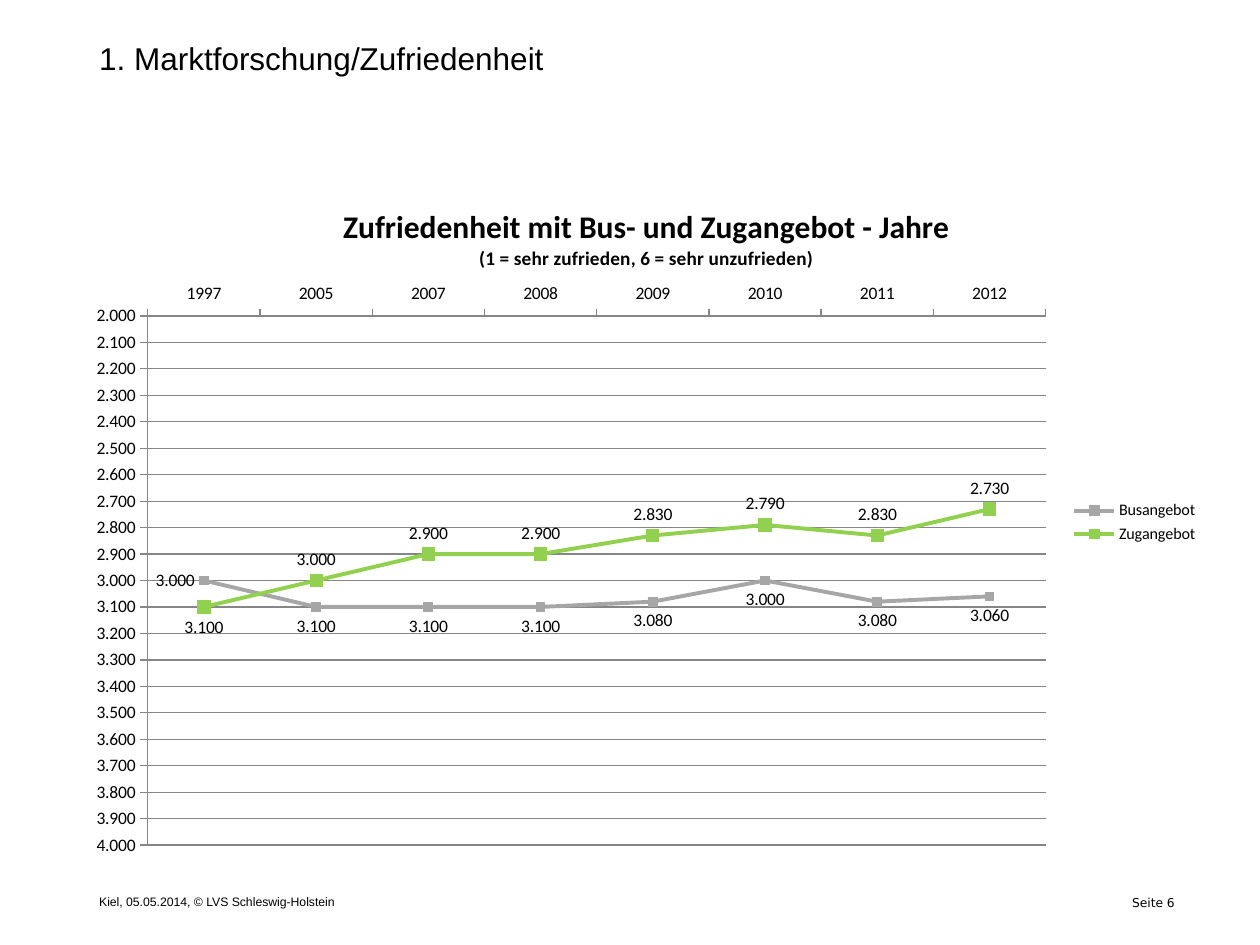
from lxml import etree
from pptx import Presentation
from pptx.chart.data import CategoryChartData
from pptx.dml.color import RGBColor
from pptx.enum.chart import (XL_CHART_TYPE, XL_LABEL_POSITION, XL_LEGEND_POSITION,
                             XL_MARKER_STYLE, XL_TICK_MARK)
from pptx.enum.text import MSO_ANCHOR, PP_ALIGN
from pptx.oxml.ns import qn
from pptx.util import Cm, Pt

COLORS = {"text": "000000", "grid": "868686", "bus": "A6A6A6", "train": "92D050"}
RGB = {name: RGBColor.from_string(value) for name, value in COLORS.items()}
NUMBER_FORMAT = "0.000"
CHART_W, CHART_H = 22.91, 14.0


def set_font(font, size, name="Calibri", bold=False):
    for key, value in {"size": Pt(size), "name": name, "bold": bold}.items():
        setattr(font, key, value)
    font.color.rgb = RGB["text"]


def set_layout(parent, position, x, y, w=None, h=None):
    """Place a chart part by lengths in cm from the chart's corner."""
    for old in parent.findall(qn("c:layout")):
        parent.remove(old)
    layout = etree.Element(qn("c:layout"))
    manual = etree.SubElement(layout, qn("c:manualLayout"))
    values = {"xMode": "edge", "yMode": "edge", "x": x / CHART_W, "y": y / CHART_H}
    if w:
        values = {"layoutTarget": "inner", **values, "w": w / CHART_W, "h": h / CHART_H}
    for tag, value in values.items():
        etree.SubElement(manual, qn(f"c:{tag}")).set("val", str(value))
    parent.insert(position, layout)


prs = Presentation()
prs.slide_width, prs.slide_height = Cm(25.4), Cm(19.05)
s = prs.slides.add_slide(prs.slide_layouts[6])

# Heading, footer and page number: text, box, size, font, alignment, anchor, right inset
texts = [
    ("1. Marktforschung/Zufriedenheit", (2, 0.71, 13.67, 0.84), 18, "Arial",
     PP_ALIGN.LEFT, MSO_ANCHOR.BOTTOM, 0),
    ("Kiel, 05.05.2014, © LVS Schleswig-Holstein", (2, 17.93, 9.7, 0.48), 7, "Arial",
     PP_ALIGN.LEFT, MSO_ANCHOR.MIDDLE, 0),
    ("Seite 6", (2.34, 17.98, 21.59, 0.43), 7, "DejaVu Sans",
     PP_ALIGN.RIGHT, MSO_ANCHOR.MIDDLE, 0.25),
]
for text, box, size, name, align, anchor, inset in texts:
    tf = s.shapes.add_textbox(*map(Cm, box)).text_frame
    frame = {"word_wrap": True, "vertical_anchor": anchor, "margin_left": 0,
             "margin_top": 0, "margin_bottom": 0, "margin_right": Cm(inset)}
    for key, value in frame.items():
        setattr(tf, key, value)
    p = tf.paragraphs[0]
    p.alignment = align
    r = p.add_run()
    r.text = text
    set_font(r.font, size, name)

# Line chart
data = CategoryChartData(number_format=NUMBER_FORMAT)
data.categories = ["1997", "2005", "2007", "2008", "2009", "2010", "2011", "2012"]
data.add_series("Busangebot", (3, 3.1, 3.1, 3.1, 3.08, 3, 3.08, 3.06))
data.add_series("Zugangebot", (3.1, 3, 2.9, 2.9, 2.83, 2.79, 2.83, 2.73))
chart = s.shapes.add_chart(XL_CHART_TYPE.LINE_MARKERS, Cm(1.5), Cm(3.53),
                           Cm(CHART_W), Cm(CHART_H), data).chart
set_font(chart.font, 10)

# Chart title
tf = chart.chart_title.text_frame
lines = [("Zufriedenheit mit Bus- und Zugangebot - Jahre", 18),
         ("(1 = sehr zufrieden, 6 = sehr unzufrieden)", 11)]
for i, (text, size) in enumerate(lines):
    p = tf.add_paragraph() if i else tf.paragraphs[0]
    p.alignment = PP_ALIGN.CENTER
    r = p.add_run()
    r.text = text
    set_font(r.font, size, bold=True)
set_layout(chart.chart_title._element, 1, 5.34, 0.55)
set_layout(chart._chartSpace.chart.plotArea, 0, 1.48, 2.84, 18.1, 10.67)

# Axes
value_axis, category_axis = chart.value_axis, chart.category_axis
scale = {"minimum_scale": 2, "maximum_scale": 4, "major_unit": 0.1,
         "reverse_order": True, "has_major_gridlines": True}
for key, value in scale.items():
    setattr(value_axis, key, value)
value_axis.tick_labels.number_format = NUMBER_FORMAT
value_axis.tick_labels.number_format_is_linked = False
for axis in (value_axis, category_axis):
    axis.major_tick_mark = XL_TICK_MARK.OUTSIDE
    set_font(axis.tick_labels.font, 10)
for part in (value_axis, category_axis, value_axis.major_gridlines):
    part.format.line.color.rgb = RGB["grid"]
    part.format.line.width = Pt(0.75)

# Legend
chart.has_legend = True
chart.legend.position = XL_LEGEND_POSITION.RIGHT
chart.legend.include_in_layout = False
set_font(chart.legend.font, 9.2)

# Series: colour, marker size, label position, position of the first label
styles = [("bus", 5, XL_LABEL_POSITION.BELOW, XL_LABEL_POSITION.LEFT),
          ("train", 7, XL_LABEL_POSITION.ABOVE, XL_LABEL_POSITION.BELOW)]
for series, (color, size, position, first) in zip(chart.plots[0].series, styles):
    series.smooth = False
    series.format.line.color.rgb = RGB[color]
    series.format.line.width = Pt(2.25)
    marker = series.marker
    marker.style, marker.size = XL_MARKER_STYLE.SQUARE, size
    marker.format.fill.solid()
    marker.format.fill.fore_color.rgb = RGB[color]
    marker.format.line.color.rgb = RGB[color]
    labels = series.data_labels
    label_format = {"show_value": True, "position": position,
                    "number_format": NUMBER_FORMAT, "number_format_is_linked": False}
    for key, value in label_format.items():
        setattr(labels, key, value)
    set_font(labels.font, 10)
    label = series.points[0].data_label
    set_font(label.font, 10)
    label.position = first

prs.save("out.pptx")
